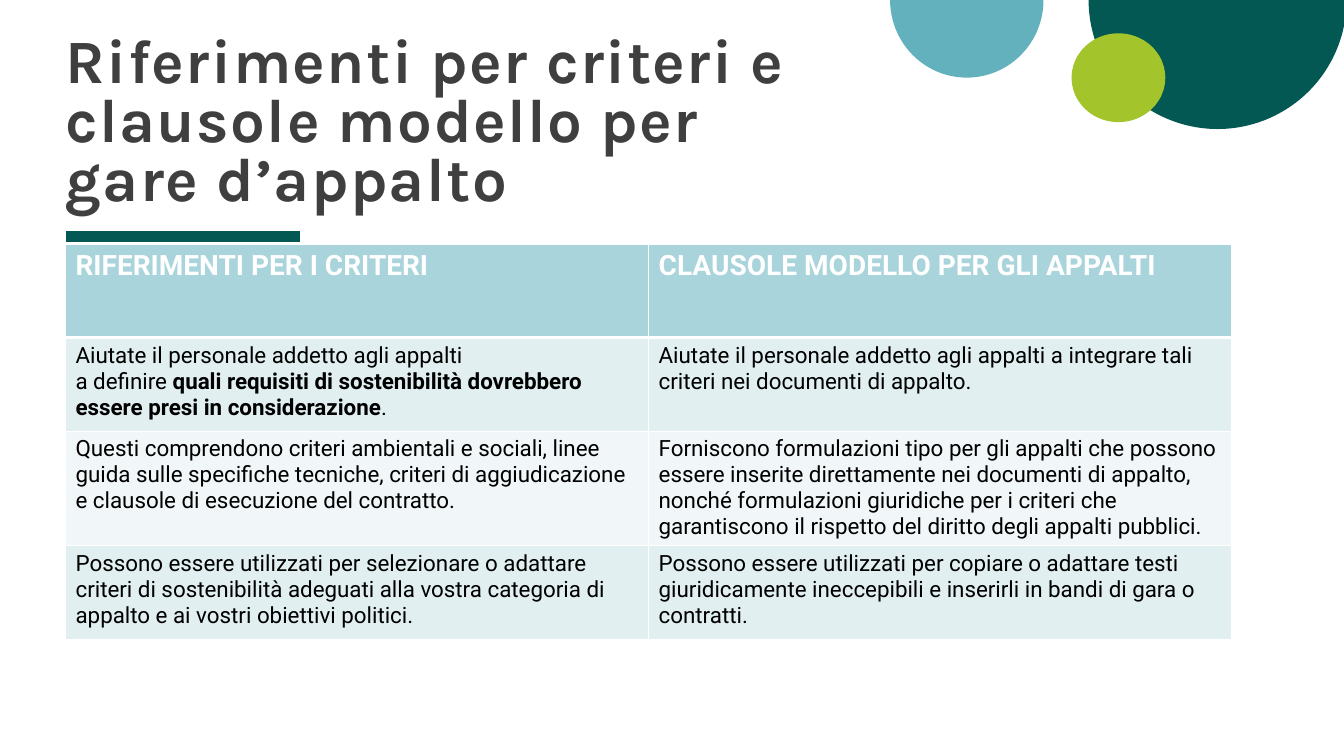
from dataclasses import dataclass

from pptx import Presentation
from pptx.dml.color import RGBColor
from pptx.enum.shapes import MSO_CONNECTOR, MSO_SHAPE
from pptx.enum.text import MSO_ANCHOR, PP_ALIGN
from pptx.oxml.ns import qn
from pptx.util import Pt
from lxml.etree import SubElement


@dataclass(frozen=True)
class Theme:
    white: str = "FFFFFF"
    black: str = "000000"
    title: str = "3F3F3F"
    dark: str = "035854"
    blue: str = "64B1BE"
    lime: str = "A3C42A"
    header: str = "A9D4DB"
    bands: tuple = ("E1EFF1", "F1F7F8")
    heading_font: str = "Karla"
    body_font: str = "Roboto"
    title_size: int = 44
    header_size: int = 20
    body_size: int = 16


THEME = Theme()

TITLE = "Riferimenti per criteri e clausole modello per gare d’appalto"

# Each cell is a list of paragraphs, each paragraph a list of (text, bold) runs.
HEADERS = [
    [[("RIFERIMENTI PER I CRITERI", True)]],
    [[("CLAUSOLE MODELLO PER GLI APPALTI", True)]],
]
BODY = [
    [
        [
            [("Aiutate il personale addetto agli appalti", False)],
            [
                ("a definire ", False),
                ("quali requisiti di sostenibilità dovrebbero essere presi "
                 "in considerazione", True),
                (".", False),
            ],
        ],
        [[("Aiutate il personale addetto agli appalti a integrare tali "
           "criteri nei documenti di appalto.", False)]],
    ],
    [
        [[("Questi comprendono criteri ambientali e sociali, linee guida "
           "sulle specifiche tecniche, criteri di aggiudicazione e clausole "
           "di esecuzione del contratto.", False)]],
        [[("Forniscono formulazioni tipo per gli appalti che possono essere "
           "inserite direttamente nei documenti di appalto, nonché "
           "formulazioni giuridiche per i criteri che garantiscono il "
           "rispetto del diritto degli appalti pubblici.", False)]],
    ],
    [
        [[("Possono essere utilizzati per selezionare o adattare criteri di "
           "sostenibilità adeguati alla vostra categoria di appalto e ai "
           "vostri obiettivi politici.", False)]],
        [[("Possono essere utilizzati per copiare o adattare testi "
           "giuridicamente ineccepibili e inserirli in bandi di gara o "
           "contratti.", False)]],
    ],
]
ROW_HEIGHTS = [66.5, 67, 81.5, 67]


def rgb(value):
    return RGBColor.from_string(value)


def add_run(p, text, font, size, color, bold):
    r = p.add_run()
    r.text = text
    r.font.name = font
    r.font.size = Pt(size)
    r.font.color.rgb = rgb(color)
    r.font.bold = bold
    return r


def add_disc(s, preset, left, top, width, height, color):
    sp = s.shapes.add_shape(preset, Pt(left), Pt(top), Pt(width), Pt(height))
    sp.shadow.inherit = False
    sp.fill.solid()
    sp.fill.fore_color.rgb = rgb(color)
    sp.line.fill.background()
    return sp


def add_half_disc(s, left, width, height, color):
    """Hang the lower half of an ellipse from the top edge of the slide."""
    sp = add_disc(s, MSO_SHAPE.PIE, left, -height / 2, width, height, color)
    sp.adjustments[0] = 0
    sp.adjustments[1] = 108


def add_corner_discs(s, left):
    add_half_disc(s, left + 141.8, 184.3, 184.3, THEME.dark)
    add_half_disc(s, left, 109.6, 110.9, THEME.blue)
    add_disc(s, MSO_SHAPE.OVAL, left + 129.6, 23.8, 67, 63.4, THEME.lime)


def add_title(s, left, top, width, height):
    """Fill the title placeholder and underline it with a short bar."""
    sp = s.shapes.title
    sp.left, sp.top, sp.width, sp.height = map(Pt, (left, top, width, height))
    tf = sp.text_frame
    tf.word_wrap = True
    tf.vertical_anchor = MSO_ANCHOR.BOTTOM
    tf.margin_left = tf.margin_right = tf.margin_top = tf.margin_bottom = 0
    p = tf.paragraphs[0]
    p.alignment = PP_ALIGN.LEFT
    p.line_spacing = 0.8
    r = add_run(p, TITLE, THEME.heading_font, THEME.title_size, THEME.title, True)
    r.font._element.set("spc", "100")

    bar_y = top + height + 16.5
    bar = s.shapes.add_connector(
        MSO_CONNECTOR.STRAIGHT, Pt(left), Pt(bar_y), Pt(left + 167.5), Pt(bar_y))
    bar.line.color.rgb = rgb(THEME.dark)
    bar.line.width = Pt(8)
    SubElement(bar._element.spPr, qn("a:effectLst"))


def set_borders(cell, top, bottom):
    tcPr = cell._tc.get_or_add_tcPr()
    for side, width in (("L", 1), ("R", 1), ("T", top), ("B", bottom)):
        ln = SubElement(tcPr, qn("a:ln" + side), w=str(Pt(width)))
        fill = SubElement(ln, qn("a:solidFill"))
        SubElement(fill, qn("a:srgbClr"), val=THEME.white)


def fill_cell(cell, paragraphs, fill, size, color):
    cell.fill.solid()
    cell.fill.fore_color.rgb = rgb(fill)
    cell.margin_left = cell.margin_right = Pt(7.2)
    cell.margin_top = cell.margin_bottom = Pt(3.6)
    tf = cell.text_frame
    for i, runs in enumerate(paragraphs):
        p = tf.add_paragraph() if i else tf.paragraphs[0]
        for text, bold in runs:
            add_run(p, text, THEME.body_font, size, color, bold)


def add_comparison_table(s, left, top, width):
    rows = [HEADERS] + BODY
    table = s.shapes.add_table(
        len(rows), len(HEADERS), Pt(left), Pt(top), Pt(width),
        Pt(sum(ROW_HEIGHTS))).table
    for column in table.columns:
        column.width = Pt(width / len(HEADERS))
    for i, row in enumerate(rows):
        table.rows[i].height = Pt(ROW_HEIGHTS[i])
        for j, paragraphs in enumerate(row):
            cell = table.cell(i, j)
            set_borders(cell, top=3 if i == 1 else 1, bottom=3 if i == 0 else 1)
            if i == 0:
                fill_cell(cell, paragraphs, THEME.header, THEME.header_size,
                          THEME.white)
            else:
                fill_cell(cell, paragraphs, THEME.bands[(i - 1) % 2],
                          THEME.body_size, THEME.black)


def main():
    prs = Presentation()
    prs.slide_width, prs.slide_height = Pt(960), Pt(540)
    s = prs.slides.add_slide(prs.slide_layouts[5])
    s.background.fill.solid()
    s.background.fill.fore_color.rgb = rgb(THEME.white)
    margin = 46.8
    add_corner_discs(s, 635.8)
    add_title(s, margin, 27.4, 534.2, 125.3)
    add_comparison_table(s, margin, 174.5, 833)
    prs.save("out.pptx")


if __name__ == "__main__":
    main()
